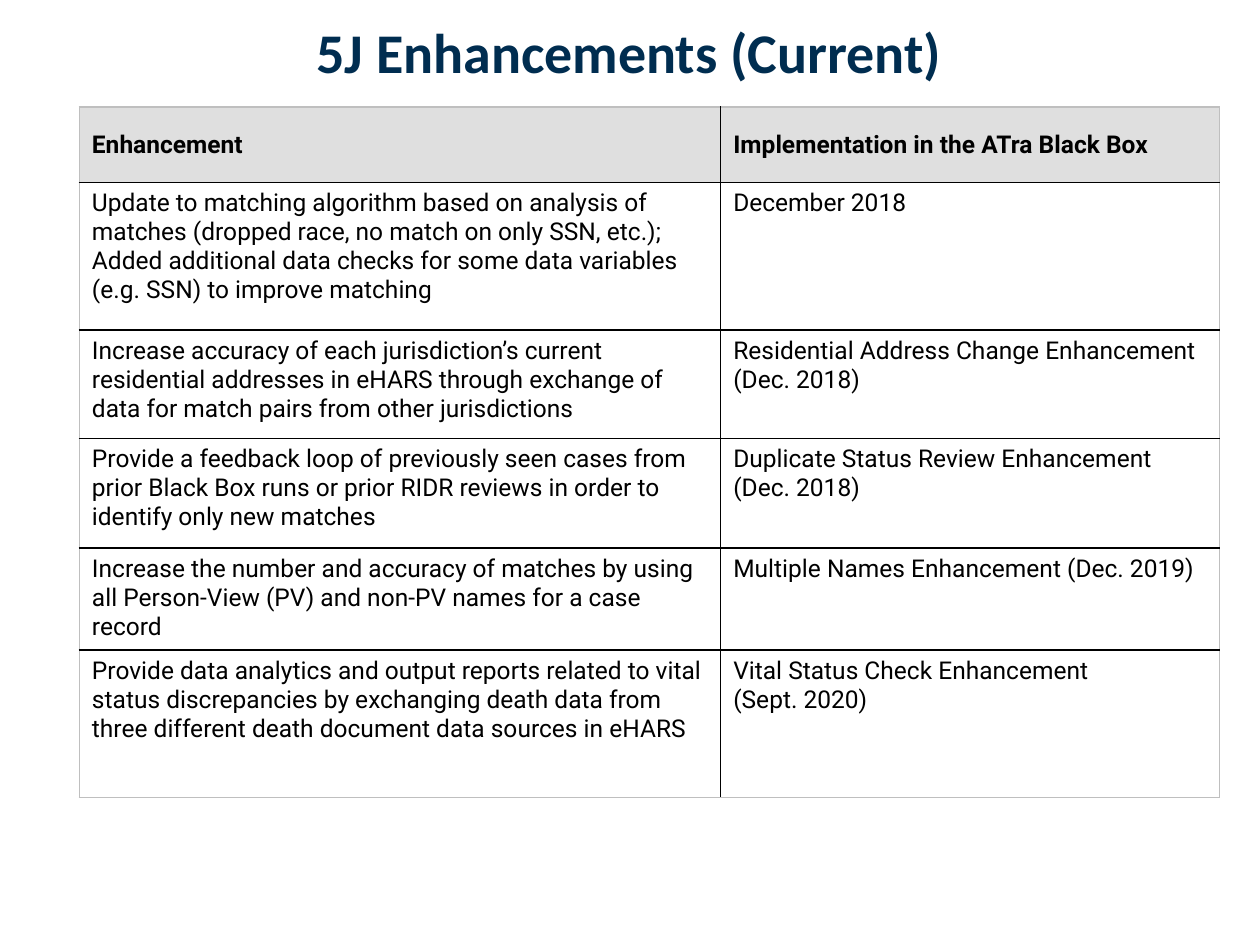
"""Build the slide that lists the current 5J enhancements in a table."""
from dataclasses import dataclass

import pptx
import pptx.dml.color
import pptx.enum.text
import pptx.oxml
import pptx.oxml.ns
import pptx.util
from pptx.util import Inches


@dataclass(frozen=True)
class Theme:
    navy: str = "002D50"
    black: str = "000000"
    head: str = "DFDFDF"
    white: str = "FFFFFF"
    edge: str = "BFBFBF"
    title: int = 32
    body: int = 14


theme = Theme()


def style(para, name, size, color, bold):
    font = para.font
    font.name = name
    font.size = pptx.util.Pt(size)
    font.bold = bold
    font.color.rgb = pptx.dml.color.RGBColor.from_string(color)


def border(cell, side, color):
    line = pptx.oxml.parse_xml(
        f'<a:{side} {pptx.oxml.ns.nsdecls("a")} w="12700"><a:solidFill>'
        f'<a:srgbClr val="{color}"/></a:solidFill></a:{side}>'
    )
    cell._tc.get_or_add_tcPr().append(line)


rows = [
    (0.6, "Enhancement", "Implementation in the ATra Black Box"),
    (1.17, "Update to matching algorithm based on analysis of matches "
     "(dropped race, no match on only SSN, etc.); Added additional data checks "
     "for some data variables (e.g. SSN) to improve matching",
     "December 2018"),
    (0.86, "Increase accuracy of each jurisdiction’s current residential "
     "addresses in eHARS through exchange of data for match pairs from other "
     "jurisdictions",
     "Residential Address Change Enhancement \v(Dec. 2018)"),
    (0.87, "Provide a feedback loop of previously seen cases from prior Black "
     "Box runs or prior RIDR reviews in order to identify only new matches",
     "Duplicate Status Review Enhancement \v(Dec. 2018)"),
    (0.81, "Increase the number and accuracy of matches by using all "
     "Person-View (PV) and non-PV names for a case record",
     "Multiple Names Enhancement (Dec. 2019)"),
    (1.17, "Provide data analytics and output reports related to vital status "
     "discrepancies by exchanging death data from three different death "
     "document data sources in eHARS",
     "Vital Status Check Enhancement \v(Sept. 2020)"),
]
widths = [5.09, 3.96]

deck = pptx.Presentation()
deck.slide_width, deck.slide_height = Inches(10), Inches(7.5)
slide = deck.slides.add_slide(deck.slide_layouts[5])

title = slide.shapes.title
title.left, title.top = Inches(0.16), Inches(0.16)
title.width, title.height = Inches(9.67), Inches(0.49)
frame = title.text_frame
frame.text = "5J Enhancements (Current)"
frame.vertical_anchor = pptx.enum.text.MSO_ANCHOR.MIDDLE
frame.paragraphs[0].alignment = pptx.enum.text.PP_ALIGN.CENTER
style(frame.paragraphs[0], "Calibri", theme.title, theme.navy, True)

table = slide.shapes.add_table(
    len(rows), len(widths), Inches(0.63), Inches(0.85),
    Inches(sum(widths)), Inches(sum(row[0] for row in rows)),
).table
table.horz_banding = False
for col, width in zip(table.columns, widths):
    col.width = Inches(width)

for r, (height, *texts) in enumerate(rows):
    table.rows[r].height = Inches(height)
    for c, text in enumerate(texts):
        cell = table.cell(r, c)
        outer = {"lnL": c == 0, "lnR": c == len(widths) - 1,
                 "lnT": r == 0, "lnB": r == len(rows) - 1}
        for side, out in outer.items():
            border(cell, side, theme.edge if out else theme.black)
        cell.fill.solid()
        cell.fill.fore_color.rgb = pptx.dml.color.RGBColor.from_string(
            theme.white if r else theme.head)
        if r == 0:
            cell.vertical_anchor = pptx.enum.text.MSO_ANCHOR.MIDDLE
        para = cell.text_frame.paragraphs[0]
        para.text = text
        style(para, "Roboto", theme.body, theme.black, r == 0)

deck.save("out.pptx")
